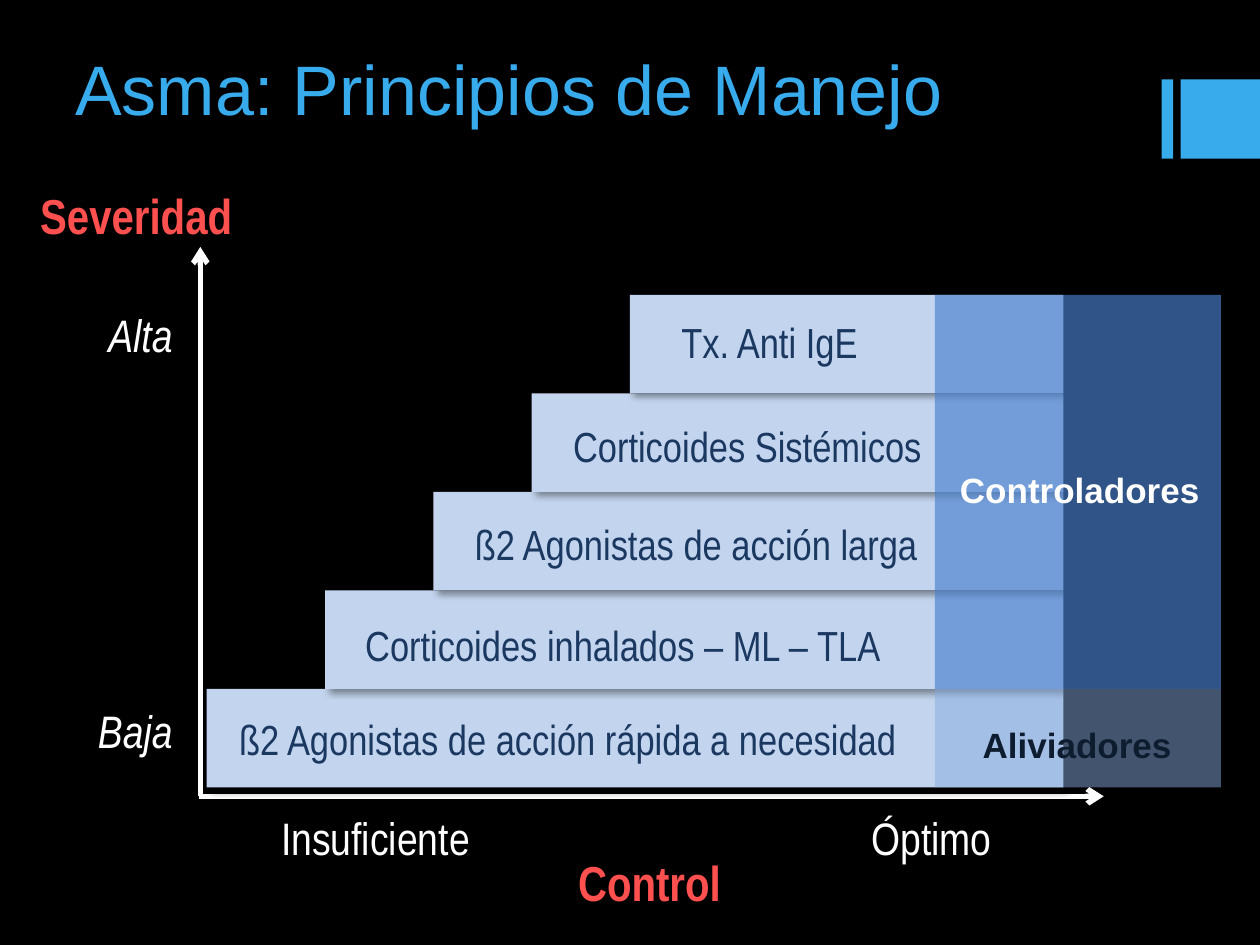
from lxml import etree
from pptx import Presentation
from pptx import util as u
from pptx.dml.color import RGBColor
from pptx.enum import shapes, text
from pptx.oxml import parse_xml
from pptx.oxml.ns import nsdecls, qn

THEME = {
    "background": "000000", "accent": "38ABED", "axis": "FFFFFF", "step": "C3D5EE",
    "controllers": "4A80CD", "relievers": "86AADD",
    "styles": {
        "title": {"name": "Arial", "size": 40, "color": "38ABED"},
        "axis_name": {"name": "Arial Narrow", "size": 28, "bold": True, "color": "FF5050"},
        "level": {"name": "Arial Narrow", "size": 26, "italic": True, "color": "FFFFFF"},
        "scale": {"name": "Arial Narrow", "size": 26, "color": "FFFFFF"},
        "step": {"name": "Arial Narrow", "size": 24, "color": "1B3861"},
        "controllers": {"name": "Arial", "size": 20, "bold": True, "color": "FFFFFF"},
        "relievers": {"name": "Arial", "size": 20, "bold": True, "color": "0E1C30"},
    },
}
LEFT, CENTER, RIGHT = text.PP_ALIGN.LEFT, text.PP_ALIGN.CENTER, text.PP_ALIGN.RIGHT
TOP, MIDDLE = text.MSO_ANCHOR.TOP, text.MSO_ANCHOR.MIDDLE

# fmt: off
ACCENT_BARS = [(9.22, 0.63, 0.09, 0.63), (9.37, 0.63, 0.63, 0.63)]
AXIS_LABELS = [
    ("Severidad", (0.22, 1.42, 1.72, 0.57), "axis_name", CENTER, TOP),
    ("Baja", (0.31, 5.27, 1.16, 1.05), "level", RIGHT, MIDDLE),
    ("Alta", (0.31, 2.13, 1.16, 1.05), "level", RIGHT, MIDDLE),
    ("Control", (4.49, 6.72, 1.33, 0.57), "axis_name", CENTER, TOP),
    ("Insuficiente", (2.12, 6.38, 1.71, 0.54), "scale", RIGHT, TOP),
    ("Óptimo", (6.8, 6.38, 1.17, 0.54), "scale", RIGHT, TOP),
]
AXES = [((1.59, 6.32), (1.59, 1.96)), ((1.58, 6.32), (8.76, 6.32))]
STEPS = [
    ("ß2 Agonistas de acción rápida a necesidad", 1.64, (1.8, 5.65, 6.48, 0.43)),
    ("Corticoides inhalados – ML – TLA", 2.58, (2.8, 4.92, 5.02, 0.39)),
    ("ß2 Agonistas de acción larga", 3.44, (3.67, 4.1, 4.45, 0.43)),
    ("Corticoides Sistémicos", 4.22, (4.45, 3.32, 3.75, 0.43)),
    ("Tx. Anti IgE", 5, (5.31, 2.5, 2.66, 0.43)),
]
STAIR_TOP, STAIR_BOTTOM, STAIR_RIGHT = 2.34, 6.25, 8.44
STEP_HEIGHT = (STAIR_BOTTOM - STAIR_TOP) / len(STEPS)
BAND_LEFT, BAND_WIDTH = 7.42, 2.27
BANDS = [
    ("Controladores", "controllers", 66, STAIR_TOP, 4, (7.52, 3.67, 2.12, 0.44)),
    ("Aliviadores", "relievers", 50, STAIR_BOTTOM - STEP_HEIGHT, 1, (7.7, 5.69, 1.71, 0.44)),
]
# fmt: on


def inches(values):
    return [u.Inches(value) for value in values]


def add_shadow(shape):
    shape._element.spPr.append(parse_xml(
        f'<a:effectLst {nsdecls("a")}><a:outerShdw blurRad="{u.Pt(4)}" dist="{u.Pt(3)}" '
        'dir="2700000" algn="tl" rotWithShape="0"><a:srgbClr val="000000">'
        '<a:alpha val="40000"/></a:srgbClr></a:outerShdw></a:effectLst>'))


def add_rectangle(slide, box, color, opacity=100, shadow=False):
    shape = slide.shapes.add_shape(shapes.MSO_SHAPE.RECTANGLE, *inches(box))
    shape.fill.solid()
    shape.fill.fore_color.rgb = RGBColor.from_string(color)
    shape.line.fill.background()
    if opacity < 100:
        fill_color = shape._element.spPr.find(qn("a:solidFill"))[0]
        etree.SubElement(fill_color, qn("a:alpha"), val=str(opacity * 1000))
    if shadow:
        add_shadow(shape)
    else:
        shape.shadow.inherit = False


def add_label(slide, words, box, style, align=LEFT, anchor=TOP, wrap=False):
    frame = slide.shapes.add_textbox(*inches(box)).text_frame
    frame.word_wrap, frame.vertical_anchor = wrap, anchor
    paragraph = frame.paragraphs[0]
    paragraph.alignment = align
    run = paragraph.add_run()
    run.text = words
    for name, value in THEME["styles"][style].items():
        if name == "color":
            run.font.color.rgb = RGBColor.from_string(value)
        else:
            setattr(run.font, name, u.Pt(value) if name == "size" else value)


def add_axis(slide, start, end):
    axis = slide.shapes.add_connector(
        shapes.MSO_CONNECTOR.STRAIGHT, *inches(start + end))
    axis.line.width = u.Pt(3)
    axis.line.color.rgb = RGBColor.from_string(THEME["axis"])
    etree.SubElement(axis.line._get_or_add_ln(), qn("a:tailEnd"), type="arrow")
    add_shadow(axis)


def main():
    """Build the asthma management slide: a treatment staircase on two axes."""
    presentation = Presentation()
    presentation.slide_width, presentation.slide_height = inches((10, 7.5))
    slide = presentation.slides.add_slide(presentation.slide_layouts[6])
    slide.background.fill.solid()
    slide.background.fill.fore_color.rgb = RGBColor.from_string(THEME["background"])

    for box in ACCENT_BARS:
        add_rectangle(slide, box, THEME["accent"])
    for label in AXIS_LABELS:
        add_label(slide, *label)
    for start, end in AXES:
        add_axis(slide, start, end)
    for index, (words, left, label_box) in enumerate(STEPS, 1):
        top = STAIR_BOTTOM - index * STEP_HEIGHT
        box = (left, top, STAIR_RIGHT - left, STEP_HEIGHT)
        add_rectangle(slide, box, THEME["step"], shadow=True)
        add_label(slide, words, label_box, "step", anchor=MIDDLE)
    add_label(slide, "Asma: Principios de Manejo", (0.5, 0.31, 9, 1), "title", wrap=True)
    for words, style, opacity, top, rows, label_box in BANDS:
        box = (BAND_LEFT, top, BAND_WIDTH, rows * STEP_HEIGHT)
        add_rectangle(slide, box, THEME[style], opacity)
        add_label(slide, words, label_box, style)

    presentation.save("out.pptx")


if __name__ == "__main__":
    main()
